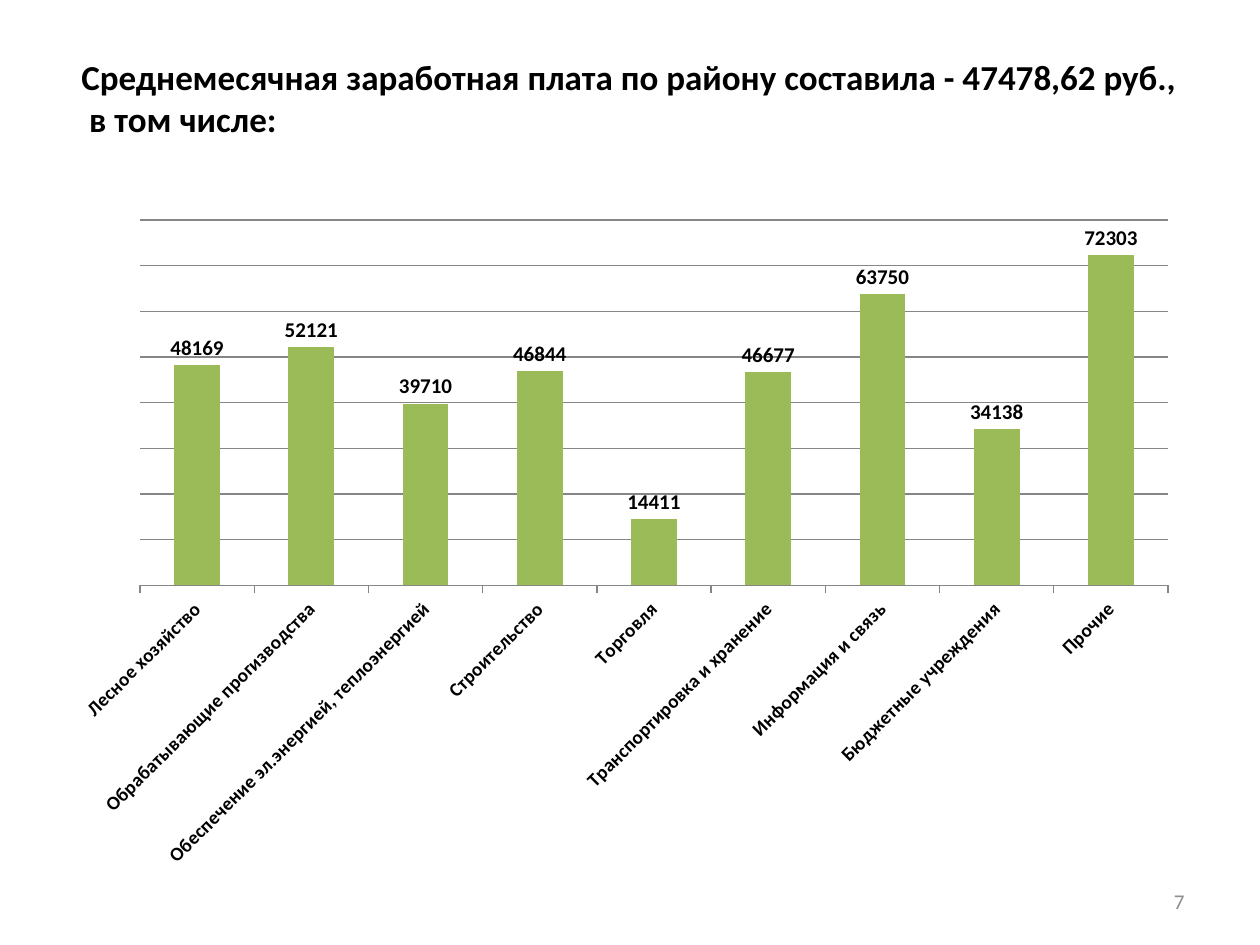
from typing import NamedTuple

from pptx import Presentation
from pptx.chart.data import CategoryChartData
from pptx.dml.color import RGBColor
from pptx.enum.chart import XL_CHART_TYPE as ChartType
from pptx.enum.chart import XL_LABEL_POSITION as LabelPos
from pptx.enum.chart import XL_TICK_MARK as Tick
from pptx.enum.text import MSO_ANCHOR as Anchor
from pptx.enum.text import MSO_AUTO_SIZE as AutoSize
from pptx.enum.text import PP_ALIGN as Align
from pptx.oxml import parse_xml
from pptx.oxml.ns import nsdecls
from pptx.util import Pt

FONT = "Calibri"
BLACK = RGBColor(0x00, 0x00, 0x00)
GREEN = RGBColor(0x9B, 0xBB, 0x59)
LINE_GRAY = RGBColor(0x86, 0x86, 0x86)
NUMBER_GRAY = RGBColor(0x8C, 0x8C, 0x8C)


class Wage(NamedTuple):
    sector: str
    rubles: int


class Box(NamedTuple):
    left: float
    top: float
    width: float
    height: float


WAGES = [
    Wage("Лесное хозяйство", 48169),
    Wage("Обрабатывающие прогизводства", 52121),
    Wage("Обеспечение эл.энергией, теплоэнергией", 39710),
    Wage("Строительство", 46844),
    Wage("Торговля", 14411),
    Wage("Транспортировка и хранение", 46677),
    Wage("Информация и связь", 63750),
    Wage("Бюджетные учреждения", 34138),
    Wage("Прочие", 72303),
]
TITLE_LINES = [
    "Среднемесячная заработная плата по району составила - 47478,62 руб.,",
    " в том числе:",
]
TITLE_BOX = Box(39.3, 28, 652.4, 55.4)
CHART_BOX = Box(33.8, 118, 646.6, 385.2)
PLOT_BOX = Box(80, 125.8, 587.5, 208.7)
NUMBER_BOX = Box(516, 500.5, 168, 28.8)


def set_font(font, size: float, bold: bool = False, color: RGBColor = BLACK) -> None:
    for name, value in {"name": FONT, "size": Pt(size), "bold": bold}.items():
        setattr(font, name, value)
    font.color.rgb = color


def set_line(line) -> None:
    line.color.rgb = LINE_GRAY
    line.width = Pt(0.75)


def place_plot(chart, outer: Box, inner: Box) -> None:
    """Fix the inner plot area and slant the category labels."""
    shares = {
        "x": (inner.left - outer.left) / outer.width,
        "y": (inner.top - outer.top) / outer.height,
        "w": inner.width / outer.width,
        "h": inner.height / outer.height,
    }
    sizes = "".join(f'<c:{key} val="{share}"/>' for key, share in shares.items())
    layout = parse_xml(
        f'<c:layout {nsdecls("c")}><c:manualLayout><c:layoutTarget val="inner"/>'
        f'<c:xMode val="edge"/><c:yMode val="edge"/>{sizes}</c:manualLayout></c:layout>'
    )
    area = chart.element.xpath(".//c:plotArea")[0]
    for old in area.xpath("./c:layout"):
        area.remove(old)
    area.insert(0, layout)
    body = area.xpath("./c:catAx/c:txPr/a:bodyPr")[0]
    body.set("rot", "-2700000")
    body.set("vert", "horz")


prs = Presentation()
prs.slide_width, prs.slide_height = Pt(720), Pt(540)
s = prs.slides.add_slide(prs.slide_layouts[5])

# Title
title = s.shapes.title
for name, value in TITLE_BOX._asdict().items():
    setattr(title, name, Pt(value))
tf = title.text_frame
for name, value in {"word_wrap": True, "vertical_anchor": Anchor.TOP,
                    "auto_size": AutoSize.SHAPE_TO_FIT_TEXT}.items():
    setattr(tf, name, value)
tf.text = "\n".join(TITLE_LINES)
for p in tf.paragraphs:
    p.alignment = Align.LEFT
    set_font(p.runs[0].font, 20, True)

# Wage chart
data = CategoryChartData(number_format="0")
data.categories = [wage.sector for wage in WAGES]
data.add_series("Series 1", [wage.rubles for wage in WAGES])
chart = s.shapes.add_chart(
    ChartType.COLUMN_CLUSTERED, *map(Pt, CHART_BOX), data).chart
chart.has_title = False
chart.has_legend = False
set_font(chart.font, 10)

plot = chart.plots[0]
plot.gap_width = 150
plot.vary_by_categories = False
fill = plot.series[0].format.fill
fill.solid()
fill.fore_color.rgb = GREEN
plot.has_data_labels = True
labels = plot.data_labels
labels.show_value = True
labels.position = LabelPos.OUTSIDE_END
set_font(labels.font, 12, True)

sectors = chart.category_axis
sectors.major_tick_mark = Tick.OUTSIDE
set_line(sectors.format.line)
set_font(sectors.tick_labels.font, 11, True)
rubles = chart.value_axis
for name, value in {"minimum_scale": 0, "maximum_scale": 80000, "major_unit": 10000,
                    "has_major_gridlines": True, "visible": False}.items():
    setattr(rubles, name, value)
set_line(rubles.major_gridlines.format.line)
place_plot(chart, CHART_BOX, PLOT_BOX)

# Page number
tf = s.shapes.add_textbox(*map(Pt, NUMBER_BOX)).text_frame
tf.word_wrap = True
tf.vertical_anchor = Anchor.MIDDLE
p = tf.paragraphs[0]
p.alignment = Align.RIGHT
r = p.add_run()
r.text = "7"
set_font(r.font, 12, color=NUMBER_GRAY)

prs.save("out.pptx")
